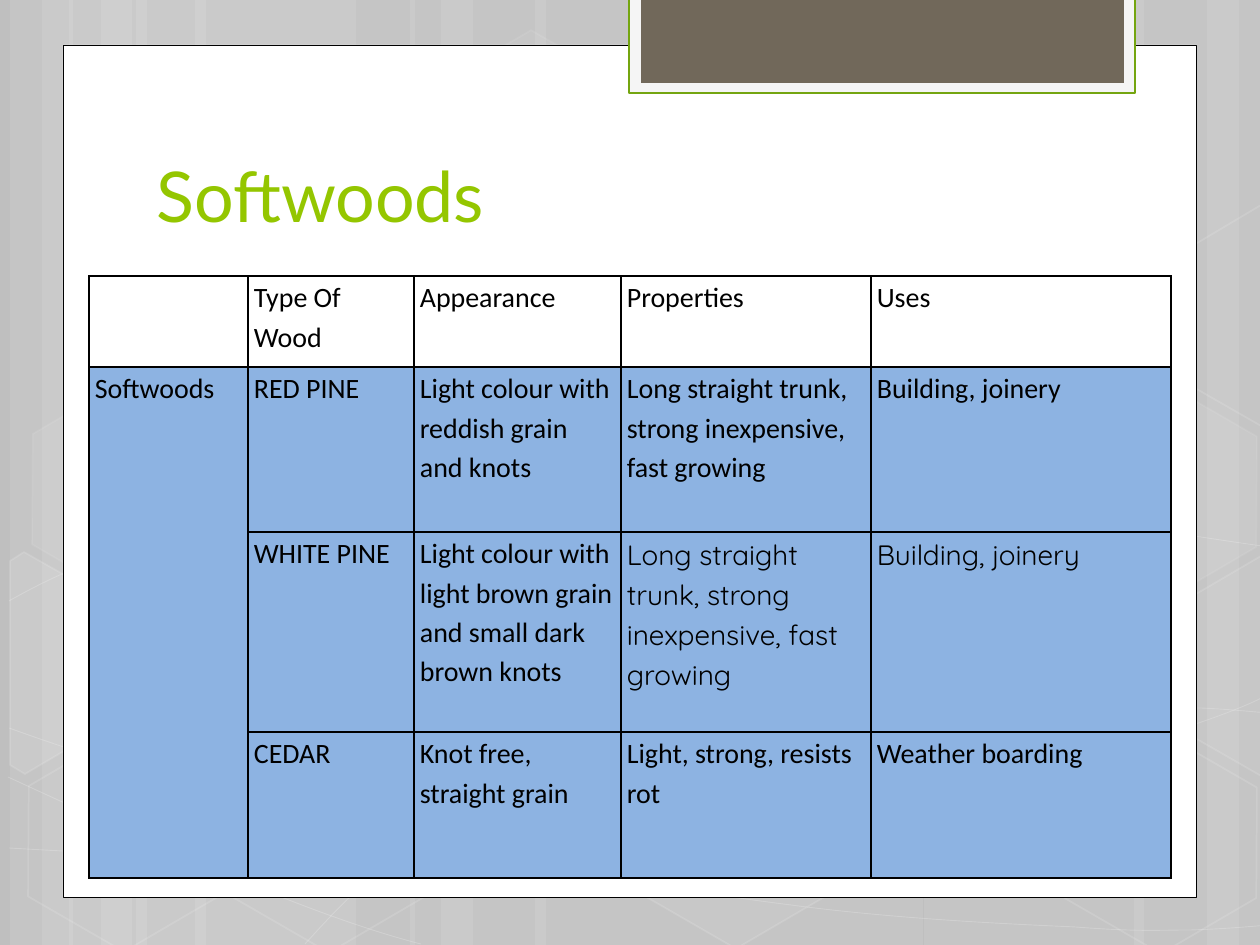
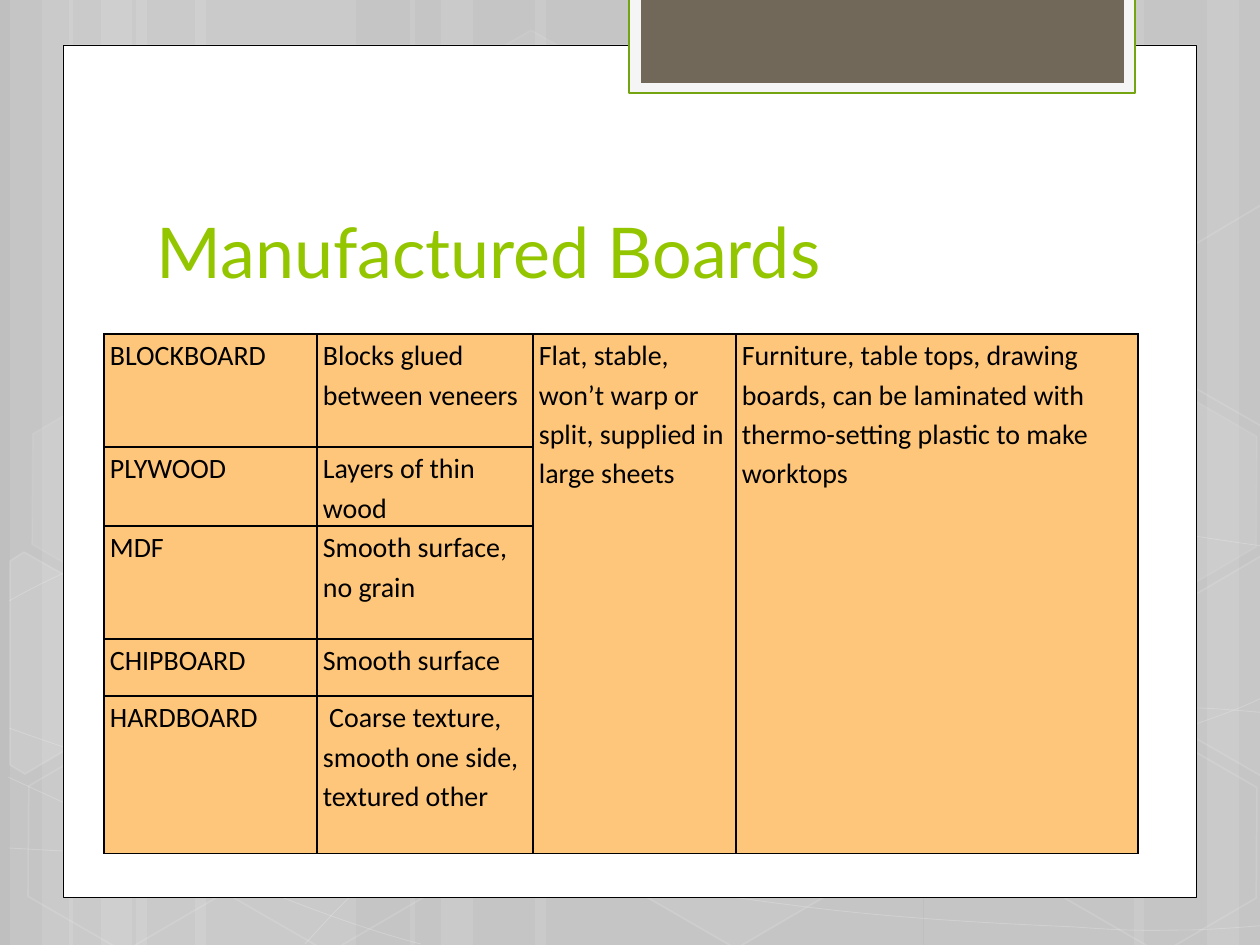
from lxml.etree import Element, SubElement
from pptx import Presentation
from pptx.dml.color import RGBColor
from pptx.enum.shapes import MSO_SHAPE
from pptx.enum.text import MSO_ANCHOR, MSO_AUTO_SIZE, PP_ALIGN
from pptx.oxml.ns import qn
from pptx.util import Emu, Pt

PX_PER_INCH = 126
BLACK, WHITE, BACKDROP = "000000", "FFFFFF", "BFBFBF"
TITLE_GREEN, TAB_GREEN, TAB_GREY, TAB_BROWN = "94C600", "74A510", "F5F5F5", "71685A"
SOFTWOOD_BLUE, BOARD_ORANGE = "8DB3E2", "FEC67A"
TITLE_FONT, BODY_FONT, ALTERNATE_FONT = "Lato", "Calibri", "Quicksand"

# In a table, None continues the cell above.
SLIDES = [
    {
        "title": "Softwoods",
        "title_top": 85,
        "table_at": (89, 276),
        "columns": [159, 166, 207, 250, 300],
        "rows": [91, 165, 200, 146],
        "fills": [None] + [SOFTWOOD_BLUE] * 3,
        "fonts": {(2, 3): ALTERNATE_FONT, (2, 4): ALTERNATE_FONT},
        "cells": [
            ["", "Type Of Wood", "Appearance", "Properties", "Uses"],
            ["Softwoods", "RED PINE", "Light colour with reddish grain and knots",
             "Long straight trunk, strong inexpensive, fast growing", "Building, joinery"],
            [None, "WHITE PINE",
             "Light colour with light brown grain and small dark brown knots",
             "Long straight trunk, strong inexpensive, fast growing", "Building, joinery"],
            [None, "CEDAR", "Knot free, straight grain",
             "Light, strong, resists rot", "Weather boarding"],
        ],
    },
    {
        "title": "Manufactured Boards",
        "title_top": 141,
        "table_at": (104, 334),
        "columns": [213, 216, 203, 402],
        "rows": [113, 79, 113, 57, 156],
        "fills": [BOARD_ORANGE] * 5,
        "fonts": {},
        "cells": [
            ["BLOCKBOARD", "Blocks glued between veneers",
             "Flat, stable, won’t warp or split, supplied in large sheets",
             "Furniture, table tops, drawing boards, can be laminated with "
             "thermo-setting plastic to make worktops"],
            ["PLYWOOD", "Layers of thin wood", None, None],
            ["MDF", "Smooth surface, no grain", None, None],
            ["CHIPBOARD", "Smooth surface", None, None],
            ["HARDBOARD", " Coarse texture, smooth one side, textured other", None, None],
        ],
    },
]

# left, width
STRIPS = [(136, 220), (10, 63), (42, 105), (195, 220), (69, 63), (101, 105),
          (924, 220), (1207, 63), (1134, 105), (535, 388), (410, 63), (441, 105)]

# start point, then two control points and an end point for each piece
CURVES = [
    [(9, 848), (77, 852), (145, 856), (239, 854), (334, 853), (451, 851), (577, 838),
     (703, 825), (882, 801), (998, 777), (1113, 753), (1231, 716), (1269, 694)],
    [(9, 601), (45, 581), (82, 562), (152, 543), (224, 524), (326, 496), (437, 488),
     (549, 479), (685, 478), (824, 488), (963, 498), (1193, 537), (1269, 547)],
    [(8, 777), (160, 847), (311, 916), (421, 944)],
    [(9, 728), (48, 742), (88, 756), (161, 776), (234, 795), (344, 827), (450, 848),
     (554, 869), (687, 892), (791, 905), (896, 919), (1008, 924), (1075, 927),
     (1140, 932), (1158, 930), (1191, 930), (1223, 929), (1246, 927), (1269, 925)],
    [(305, 944), (328, 919), (350, 894), (381, 871), (411, 848), (454, 823), (489, 805),
     (524, 788), (546, 780), (592, 767), (638, 755), (722, 737), (766, 728),
     (811, 719), (818, 719), (857, 717), (896, 713), (958, 709), (1000, 708),
     (1045, 707), (1116, 708), (1116, 708), (1144, 708), (1173, 708), (1201, 708),
     (1223, 709), (1245, 711), (1256, 712), (1268, 713), (1264, 712), (1268, 713)],
]

# left, top, fill opacity, line opacity
HEXAGONS = [(421, 45, 4, 8), (626, 742, 6, 12), (14, 745, 0, 12), (18, 393, 7, 8),
            (219, 746, 0, 12), (949, 571, 10, 12), (1051, 747, 0, 12), (1051, 396, 7, 8)]

# fill opacity, corners
CUT_HEXAGONS = [
    (10, [(10, 561), (24, 552), (121, 607), (120, 718), (25, 774), (10, 765)]),
    (4, [(1167, 611), (1261, 556), (1271, 562), (1271, 772), (1263, 777), (1167, 722)]),
    (0, [(1167, 261), (1261, 205), (1273, 212), (1271, 422), (1263, 427), (1167, 372)]),
]


def emu(px):
    return Emu(round(px * 914400 / PX_PER_INCH))


def rgb(hex_color):
    return RGBColor.from_string(hex_color)


def set_opacity(properties, percent):
    for color in properties.iter(qn("a:srgbClr")):
        SubElement(color, qn("a:alpha"), val=str(percent * 1000))


def paint(shape, fill=None, fill_opacity=100, line=None, line_width=1, line_opacity=100):
    shape.shadow.inherit = False
    if fill and fill_opacity:
        shape.fill.solid()
        shape.fill.fore_color.rgb = rgb(fill)
        if fill_opacity < 100:
            set_opacity(shape.element.spPr.find(qn("a:solidFill")), fill_opacity)
    else:
        shape.fill.background()
    if line:
        shape.line.color.rgb = rgb(line)
        shape.line.width = Pt(line_width)
        if line_opacity < 100:
            set_opacity(shape.element.spPr.find(qn("a:ln")), line_opacity)
    else:
        shape.line.fill.background()
    return shape


def add_box(shapes, left, top, width, height, kind=MSO_SHAPE.RECTANGLE, **look):
    box = shapes.add_shape(kind, emu(left), emu(top), emu(width), emu(height))
    return paint(box, **look)


def add_outline(shapes, points, close, **look):
    corners = [(emu(x), emu(y)) for x, y in points]
    builder = shapes.build_freeform(*corners[0])
    builder.add_line_segments(corners[1:], close=close)
    return paint(builder.convert_to_shape(), **look)


def add_curve(shapes, knots, **look):
    """Draw straight pieces between the end points, then bend each one."""
    curve = add_outline(shapes, knots[::3], False, **look)
    pieces = list(curve.element.iter(qn("a:lnTo")))
    for piece, first, second in zip(pieces, knots[1::3], knots[2::3]):
        piece.tag = qn("a:cubicBezTo")
        for position, (x, y) in enumerate((first, second)):
            control = Element(qn("a:pt"), x=str(emu(x) - curve.left), y=str(emu(y) - curve.top))
            piece.insert(position, control)


def draw_scenery(shapes):
    for left, width in STRIPS:
        add_box(shapes, left, 0, width, 945, fill=WHITE, fill_opacity=10)
    for knots in CURVES:
        add_curve(shapes, knots, line=WHITE, line_width=0.5, line_opacity=20)
    for left, top, fill_opacity, line_opacity in HEXAGONS:
        hexagon = add_box(shapes, left, top, 220, 192, MSO_SHAPE.HEXAGON, fill=WHITE,
                          fill_opacity=fill_opacity, line=WHITE, line_opacity=line_opacity)
        hexagon.adjustments[0] = 0.285
        hexagon.rotation = 30
    for fill_opacity, corners in CUT_HEXAGONS:
        add_outline(shapes, corners, True, fill=WHITE, fill_opacity=fill_opacity,
                    line=WHITE, line_opacity=12)
    add_box(shapes, 63, 45, 1134, 853, fill=WHITE, line=BLACK, line_width=0.5)
    add_box(shapes, 629, -3, 506, 96, fill=TAB_GREY, line=TAB_GREEN, line_width=1.25)
    add_box(shapes, 641, -3, 483, 86, fill=TAB_BROWN)


def furnish_layout(layout, slide):
    """Draw the scenery on an empty slide and move it to the layout."""
    layout.background.fill.solid()
    layout.background.fill.fore_color.rgb = rgb(BACKDROP)
    for placeholder in list(layout.placeholders)[1:]:
        layout.shapes.element.remove(placeholder.element)
    draw_scenery(slide.shapes)
    for shape in list(slide.shapes):
        if not shape.is_placeholder:
            layout.shapes.element.append(shape.element)


def write(frame, text, size, font, color, spacing=1.0):
    frame.word_wrap = True
    paragraph = frame.paragraphs[0]
    paragraph.alignment = PP_ALIGN.LEFT
    paragraph.line_spacing = spacing
    run = paragraph.add_run()
    run.text = text
    run.font.size = Pt(size)
    run.font.name = font
    run.font.color.rgb = rgb(color)


def place_title(title, text, top):
    title.left, title.top, title.width, title.height = map(emu, (144, top, 968, 158))
    title.text_frame.auto_size = MSO_AUTO_SIZE.NONE
    title.text_frame.vertical_anchor = MSO_ANCHOR.BOTTOM
    write(title.text_frame, text, 40, TITLE_FONT, TITLE_GREEN)


def format_cell(cell, fill):
    cell.margin_left = cell.margin_right = emu(6)
    cell.margin_top = cell.margin_bottom = 0
    cell.vertical_anchor = MSO_ANCHOR.TOP
    properties = cell._tc.get_or_add_tcPr()
    for side in ("lnL", "lnR", "lnT", "lnB"):
        border = SubElement(properties, qn(f"a:{side}"), w=str(Pt(1)))
        SubElement(SubElement(border, qn("a:solidFill")), qn("a:srgbClr"), val=BLACK)
    if fill:
        cell.fill.solid()
        cell.fill.fore_color.rgb = rgb(fill)
    else:
        cell.fill.background()


def add_wood_table(shapes, content):
    cells, widths, heights = content["cells"], content["columns"], content["rows"]
    frame = shapes.add_table(len(heights), len(widths), *map(emu, content["table_at"]),
                             emu(sum(widths)), emu(sum(heights)))
    table = frame.table
    table.first_row = table.horz_banding = False
    for column, width in zip(table.columns, widths):
        column.width = emu(width)
    for row, height in zip(table.rows, heights):
        row.height = emu(height)
    for r, texts in enumerate(cells):
        for c, text in enumerate(texts):
            cell = table.cell(r, c)
            format_cell(cell, content["fills"][r])
            if text is None:
                continue
            last = r
            while last + 1 < len(cells) and cells[last + 1][c] is None:
                last += 1
            if last > r:
                cell.merge(table.cell(last, c))
            if text:
                font = content["fonts"].get((r, c), BODY_FONT)
                write(cell.text_frame, text, 16, font, BLACK, spacing=1.15)


def main():
    deck = Presentation()
    deck.slide_width, deck.slide_height = emu(1260), emu(945)
    layout = deck.slide_layouts.get_by_name("Title Only")
    slides = [deck.slides.add_slide(layout) for _ in SLIDES]
    furnish_layout(layout, slides[0])
    for slide, content in zip(slides, SLIDES):
        place_title(slide.shapes.title, content["title"], content["title_top"])
        add_wood_table(slide.shapes, content)
    deck.save("out.pptx")


if __name__ == "__main__":
    main()
